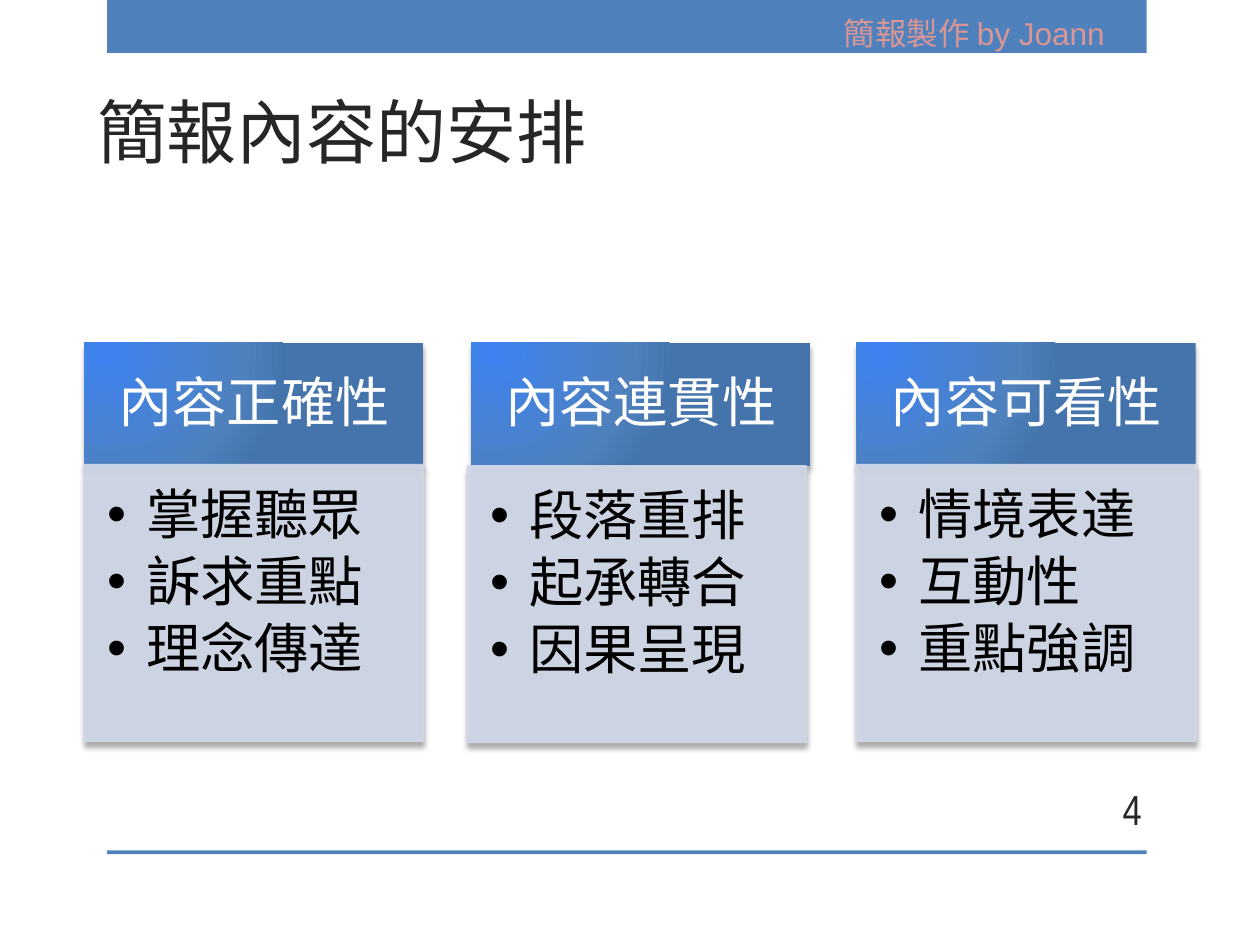
from lxml import etree
from pptx import Presentation
from pptx.dml.color import RGBColor
from pptx.enum.shapes import MSO_SHAPE as Shape
from pptx.enum.text import MSO_ANCHOR as Anchor, PP_ALIGN as Align
from pptx.oxml import parse_xml
from pptx.oxml.ns import nsdecls, qn
from pptx.util import Inches, Pt

COLORS = {
    "bar": "4F81BD",
    "credit": "D99694",
    "ink": "262626",
    "header_light": "3D83F1",
    "header_dark": "4574AC",
    "header_text": "FFFFFF",
    "panel": "D0D8E8",
    "panel_text": "000000",
    "shadow": "000000",
}

COLUMNS = [
    (0.67, 0.67, 3.69, "內容正確性", ["掌握聽眾", "訴求重點", "理念傳達"]),
    (3.74, 3.71, 3.70, "內容連貫性", ["段落重排", "起承轉合", "因果呈現"]),
    (6.80, 6.80, 3.69, "內容可看性", ["情境表達", "互動性", "重點強調"]),
]
COLUMN_WIDTH = 2.69
HEADER_TOP, HEADER_HEIGHT, PANEL_HEIGHT = 2.72, 0.98, 2.19


def color(name):
    return RGBColor.from_string(COLORS[name])


def set_attributes(target, values):
    for name, value in values.items():
        setattr(target, name, value)


def set_frame(text_frame, margins=(0.1, 0.05, 0.1, 0.05), anchor=Anchor.TOP):
    sides = ("margin_left", "margin_top", "margin_right", "margin_bottom")
    set_attributes(text_frame, dict(zip(sides, map(Inches, margins))))
    set_attributes(text_frame, {"word_wrap": True, "vertical_anchor": anchor})


def write(paragraph, text, size, font_name, color_name, align=Align.LEFT):
    paragraph.alignment = align
    run = paragraph.add_run()
    run.text = text
    set_attributes(run.font, {"size": Pt(size), "name": font_name})
    run.font.color.rgb = color(color_name)


def space_after(paragraph, percent):
    paragraph.line_spacing = 0.9
    spacing = etree.SubElement(paragraph._p.get_or_add_pPr(), qn("a:spcAft"))
    etree.SubElement(spacing, qn("a:spcPct"), val=str(percent * 1000))


def add_bullet(paragraph):
    properties = paragraph._p.get_or_add_pPr()
    properties.set("marL", str(Inches(0.31)))
    properties.set("indent", str(Inches(-0.31)))
    etree.SubElement(properties, qn("a:buFont"), typeface="Arial")
    etree.SubElement(properties, qn("a:buChar"), char="•")


def add_rectangle(slide, box):
    shape = slide.shapes.add_shape(Shape.RECTANGLE, *map(Inches, box))
    shape.shadow.inherit = False
    return shape


def add_shadow(shape):
    effects = shape._element.spPr.find(qn("a:effectLst"))
    effects.append(parse_xml(
        f'<a:outerShdw {nsdecls("a")} blurRad="{Pt(3)}" dist="{Pt(3)}" '
        f'dir="5400000" rotWithShape="0"><a:srgbClr val="{COLORS["shadow"]}">'
        f'<a:alpha val="35000"/></a:srgbClr></a:outerShdw>'))


def fill_radial(shape):
    stops = [(0, "header_light"), (76, "bar"), (100, "header_dark")]
    stop_xml = "".join(
        f'<a:gs pos="{position * 1000}"><a:srgbClr val="{COLORS[name]}"/></a:gs>'
        for position, name in stops)
    gradient = parse_xml(
        f'<a:gradFill {nsdecls("a")} rotWithShape="1"><a:gsLst>{stop_xml}</a:gsLst>'
        f'<a:path path="circle"><a:fillToRect l="15000" t="15000" '
        f'r="100000" b="100000"/></a:path></a:gradFill>')
    shape._element.spPr.find(qn("a:prstGeom")).addnext(gradient)


def add_bar(slide, box):
    bar = add_rectangle(slide, box)
    bar.fill.solid()
    bar.fill.fore_color.rgb = color("bar")
    bar.line.fill.background()


def add_label(slide, box, text, size, font_name, color_name,
              align=Align.LEFT, anchor=Anchor.TOP):
    text_frame = slide.shapes.add_textbox(*map(Inches, box)).text_frame
    set_frame(text_frame, anchor=anchor)
    write(text_frame.paragraphs[0], text, size, font_name, color_name, align)


def place_title(slide, box, text):
    title = slide.shapes.title
    sides = ("left", "top", "width", "height")
    set_attributes(title, dict(zip(sides, map(Inches, box))))
    set_frame(title.text_frame, anchor=Anchor.BOTTOM)
    write(title.text_frame.paragraphs[0], text, 40, "Arial Narrow", "ink")


def add_header(slide, box, text):
    header = add_rectangle(slide, box)
    fill_radial(header)
    header.line.fill.background()
    add_shadow(header)
    set_frame(header.text_frame, (0.24, 0.14, 0.24, 0.14), Anchor.MIDDLE)
    paragraph = header.text_frame.paragraphs[0]
    write(paragraph, text, 31, "Times New Roman", "header_text", Align.CENTER)
    space_after(paragraph, 35)


def add_panel(slide, box, items):
    panel = add_rectangle(slide, box)
    panel.line.width = Pt(1.25)
    for part in (panel.fill, panel.line.fill):
        part.solid()
        part.fore_color.rgb = color("panel")
    for swatch in panel._element.spPr.iter(qn("a:srgbClr")):
        etree.SubElement(swatch, qn("a:alpha"), val="90000")
    add_shadow(panel)
    text_frame = panel.text_frame
    set_frame(text_frame, (0.18, 0.18, 0.24, 0.27))
    for index, item in enumerate(items):
        paragraph = text_frame.add_paragraph() if index else text_frame.paragraphs[0]
        write(paragraph, item, 31, "Times New Roman", "panel_text")
        space_after(paragraph, 15)
        add_bullet(paragraph)


def main():
    presentation = Presentation()
    presentation.slide_width, presentation.slide_height = Inches(10), Inches(7.5)
    slide = presentation.slides.add_slide(presentation.slide_layouts[5])
    add_bar(slide, (0.85, 0, 8.25, 0.42))
    add_bar(slide, (0.85, 6.75, 8.25, 0.03))
    add_label(slide, (6.6, 0.06, 2.5, 0.4), "簡報製作 by Joann", 18, "Arial", "credit")
    place_title(slide, (0.67, 0.68, 7.68, 0.74), "簡報內容的安排")
    add_label(slide, (8.33, 6.22, 0.83, 0.4), "4", 24, "Arial Narrow", "ink",
              Align.RIGHT, Anchor.MIDDLE)
    for header_left, panel_left, panel_top, heading, items in COLUMNS:
        add_header(slide, (header_left, HEADER_TOP, COLUMN_WIDTH, HEADER_HEIGHT), heading)
        add_panel(slide, (panel_left, panel_top, COLUMN_WIDTH, PANEL_HEIGHT), items)
    presentation.save("out.pptx")


if __name__ == "__main__":
    main()
